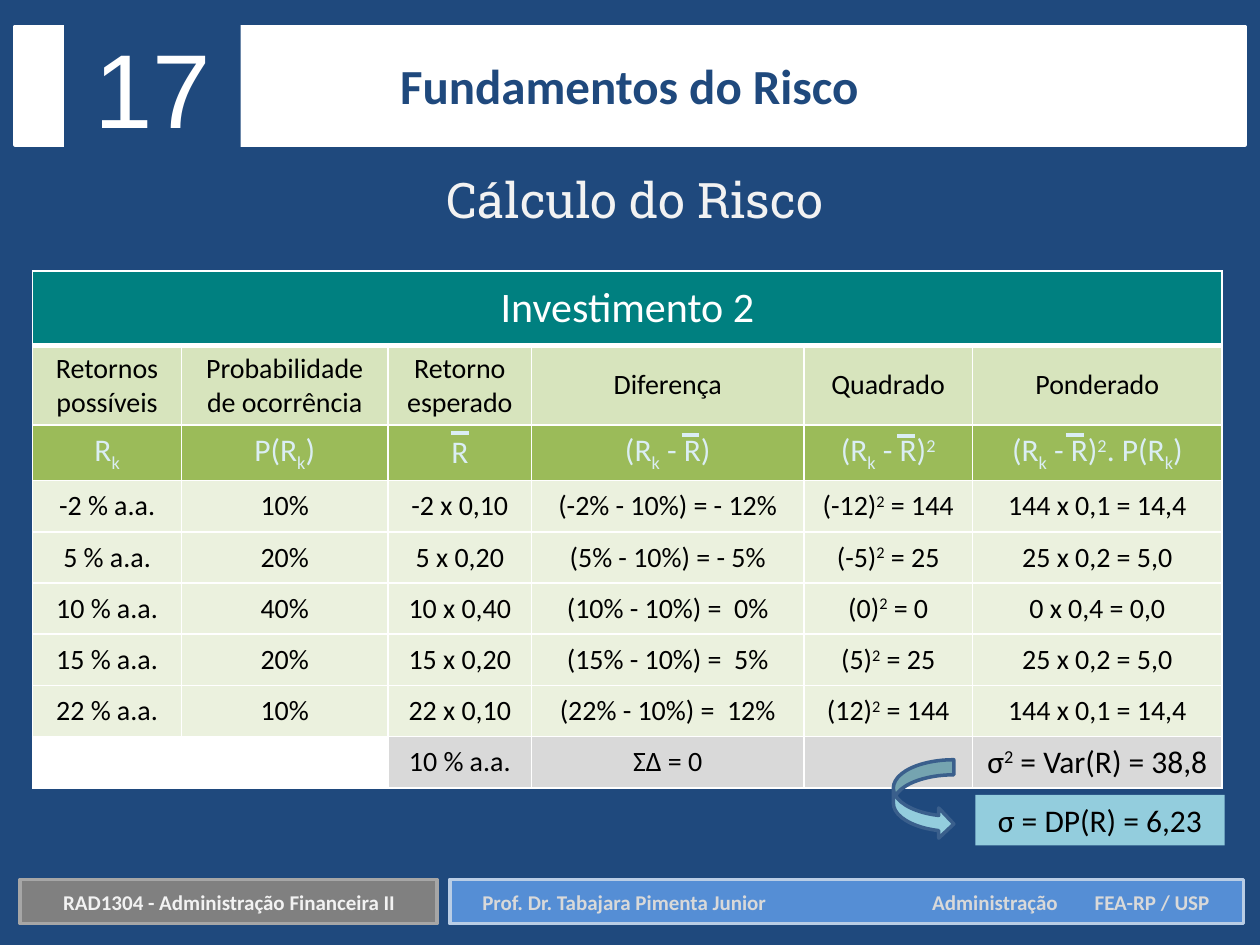
from dataclasses import dataclass

from lxml import etree
from pptx import Presentation
from pptx.dml.color import RGBColor
from pptx.enum import shapes, text
from pptx.oxml import ns
from pptx.util import Inches, Pt


@dataclass(frozen=True)
class Theme:
    """Colours, fonts and type sizes of the slide."""
    navy: str = "1F497D"
    white: str = "FFFFFF"
    black: str = "000000"
    pale: str = "F2F2F2"
    silver: str = "D9D9D9"
    grey: str = "808080"
    grey_edge: str = "A6A6A6"
    blue: str = "558ED5"
    blue_edge: str = "B9CDE5"
    arrow_edge: str = "3A5F8C"
    aqua: str = "93CDDD"
    ice: str = "DBEEF4"
    teal: str = "008080"
    green: str = "9BBB59"
    green_light: str = "D7E4BD"
    green_pale: str = "EBF1DE"
    body: str = "Calibri"
    accent: str = "Roboto Slab"
    numeral: str = "Arial"
    huge: int = 60
    heading: int = 28
    banner: int = 24
    large: int = 18
    normal: int = 16
    small: int = 12


class SlideBuilder:
    """Draws styled elements on the current slide."""

    def __init__(self, slide, theme):
        self.slide = slide
        self.theme = theme
        slide.background.fill.solid()
        slide.background.fill.fore_color.rgb = RGBColor.from_string(theme.navy)

    def set_text(self, frame, content, size, color, font=None, bold=False, tabs=()):
        """Set one line, where _ and ^ lower or raise the next character."""
        frame.word_wrap = True
        frame.vertical_anchor = text.MSO_ANCHOR.MIDDLE
        line = frame.paragraphs[0]
        line.alignment = text.PP_ALIGN.LEFT if tabs else text.PP_ALIGN.CENTER
        if tabs:
            stops = etree.SubElement(line._p.get_or_add_pPr(), ns.qn("a:tabLst"))
            for stop in tabs:
                etree.SubElement(stops, ns.qn("a:tab"), pos=str(Inches(stop)), algn="l")
        line.font.name = font or self.theme.body
        line.font.size = Pt(size)
        line.font.bold = bold
        line.font.color.rgb = RGBColor.from_string(color)
        shifts = {"_": "-25000", "^": "30000"}
        pieces, pending = [], None
        for char in content:
            if char in shifts:
                pending = shifts[char]
            elif pending or not pieces or pieces[-1][1]:
                pieces.append([char, pending])
                pending = None
            else:
                pieces[-1][0] += char
        for piece, shift in pieces:
            run = line.add_run()
            run.text = piece
            if shift:
                run._r.get_or_add_rPr().set("baseline", shift)

    def shape(self, box, fill, edge=None, kind=shapes.MSO_SHAPE.RECTANGLE):
        """Add a preset shape with an optional 2 pt outline."""
        added = self.slide.shapes.add_shape(kind, *map(Inches, box))
        added.shadow.inherit = False
        added.fill.solid()
        added.fill.fore_color.rgb = RGBColor.from_string(fill)
        if edge:
            added.line.color.rgb = RGBColor.from_string(edge)
            added.line.width = Pt(2)
        else:
            added.line.fill.background()
        return added

    def label(self, box, content, size, color, **style):
        """Add a text box."""
        added = self.slide.shapes.add_textbox(*map(Inches, box))
        self.set_text(added.text_frame, content, size, color, **style)

    def title(self, box, content):
        """Place the title placeholder in front of what is already drawn."""
        heading = self.slide.shapes.title
        heading.left, heading.top, heading.width, heading.height = map(Inches, box)
        self.set_text(heading.text_frame, content, self.theme.heading, self.theme.navy, bold=True)
        heading.element.getparent().append(heading.element)

    def overline(self, left, top, width=0.14):
        """Draw the bar above a mean."""
        bar = self.slide.shapes.add_connector(
            shapes.MSO_CONNECTOR.STRAIGHT, Inches(left), Inches(top),
            Inches(left + width), Inches(top))
        bar.line.color.rgb = RGBColor.from_string(self.theme.ice)
        bar.line.width = Pt(2.25)
        etree.SubElement(bar._element.spPr, ns.qn("a:effectLst"))

    def cell(self, cell, content, fill, size, color, bottom=1):
        """Fill one table cell and give it white borders."""
        properties = cell._tc.get_or_add_tcPr()
        for side, width in (("L", 1), ("R", 1), ("T", 1), ("B", bottom)):
            border = etree.SubElement(properties, ns.qn(f"a:ln{side}"), w=str(Pt(width)))
            paint = etree.SubElement(border, ns.qn("a:solidFill"))
            etree.SubElement(paint, ns.qn("a:srgbClr"), val=self.theme.white)
        cell.fill.solid()
        cell.fill.fore_color.rgb = RGBColor.from_string(fill)
        if content:
            self.set_text(cell.text_frame, content, size, color)
        cell.vertical_anchor = text.MSO_ANCHOR.MIDDLE

    def table(self, left, top, widths, heights, banner, rows):
        """Add a table with a banner row above the styled rows."""
        theme = self.theme
        grid = self.slide.shapes.add_table(
            len(heights), len(widths), Inches(left), Inches(top),
            Inches(sum(widths)), Inches(sum(heights))).table
        grid.first_row = grid.horz_banding = False
        for column, width in zip(grid.columns, widths):
            column.width = Inches(width)
        for row, height in zip(grid.rows, heights):
            row.height = Inches(height)
        grid.cell(0, 0).merge(grid.cell(0, len(widths) - 1))
        for col in range(len(widths)):
            self.cell(grid.cell(0, col), "" if col else banner, theme.teal,
                      theme.banner, theme.white, bottom=3)
        for r, (contents, fill, size, color) in enumerate(rows, 1):
            for c, content in enumerate(contents):
                is_total = content.startswith("σ")
                is_blank = not content and c < 2
                self.cell(grid.cell(r, c), content, theme.white if is_blank else fill,
                          theme.large if is_total else size, color)


def main():
    """Build the risk calculation slide."""
    deck = Presentation()
    deck.slide_width, deck.slide_height = Inches(10), Inches(7.5)
    theme = Theme()
    page = SlideBuilder(deck.slides.add_slide(deck.slide_layouts[5]), theme)

    page.shape((3.57, 6.98, 6.3, 0.35), theme.blue, theme.blue_edge)
    page.label((3.73, 7.01, 6.14, 0.3),
               "Prof. Dr. Tabajara Pimenta Junior\tAdministração\tFEA-RP / USP",
               theme.small, theme.silver, bold=True, tabs=(3.57, 4.86))
    page.shape((0.16, 6.98, 3.31, 0.35), theme.grey, theme.grey_edge)
    page.label((0.21, 7.01, 3.22, 0.3), "RAD1304 - Administração Financeira II",
               theme.small, theme.pale, bold=True)

    headings = ("Retornos possíveis", "Probabilidade de ocorrência", "Retorno esperado",
                "Diferença", "Quadrado", "Ponderado")
    symbols = ("R_k", "P(R_k)", "R", "(R_k - R)", "(R_k - R)^2", "(R_k - R)^2. P(R_k)")
    outcomes = (
        ("-2 % a.a.", "10%", "-2 x 0,10", "(-2% - 10%) = - 12%", "(-12)^2 = 144", "144 x 0,1 = 14,4"),
        ("5 % a.a.", "20%", "5 x 0,20", "(5% - 10%) = - 5%", "(-5)^2 = 25", "25 x 0,2 = 5,0"),
        ("10 % a.a.", "40%", "10 x 0,40", "(10% - 10%) =  0%", "(0)^2 = 0", "0 x 0,4 = 0,0"),
        ("15 % a.a.", "20%", "15 x 0,20", "(15% - 10%) =  5%", "(5)^2 = 25", "25 x 0,2 = 5,0"),
        ("22 % a.a.", "10%", "22 x 0,10", "(22% - 10%) =  12%", "(12)^2 = 144", "144 x 0,1 = 14,4"),
    )
    totals = ("", "", "10 % a.a.", "ΣΔ = 0", "", "σ^2 = Var(R) = 38,8")
    rows = [
        (headings, theme.green_light, theme.normal, theme.black),
        (symbols, theme.green, theme.large, theme.ice),
        *((outcome, theme.green_pale, theme.normal, theme.black) for outcome in outcomes),
        (totals, theme.silver, theme.normal, theme.black),
    ]
    page.table(0.26, 2.15, (1.18, 1.64, 1.14, 2.16, 1.34, 1.98),
               [0.59, 0.63, 0.44] + [2.44 / 6] * 6, "Investimento 2", rows)

    page.label((1.75, 1.29, 6.58, 0.57), "Cálculo do Risco", theme.heading, theme.pale,
               font=theme.accent)
    for left, top in ((3.58, 3.44), (5.41, 3.45), (7.12, 3.46), (8.46, 3.45)):
        page.overline(left, top)
    page.shape((7.09, 6.03, 0.48, 0.63), theme.aqua, theme.arrow_edge,
               shapes.MSO_SHAPE.CURVED_RIGHT_ARROW)
    deviation = page.shape((7.74, 6.31, 1.98, 0.4), theme.aqua)
    page.set_text(deviation.text_frame, "σ = DP(R) = 6,23", theme.large, theme.black)

    page.shape((0.12, 0.21, 9.76, 0.94), theme.white, theme.white)
    page.title((2.32, 0.39, 5.35, 0.57), "Fundamentos do Risco")
    number = page.shape((0.51, 0.13, 1.4, 1.11), theme.navy)
    page.set_text(number.text_frame, "17", theme.huge, theme.white, font=theme.numeral)

    deck.save("out.pptx")


if __name__ == "__main__":
    main()
